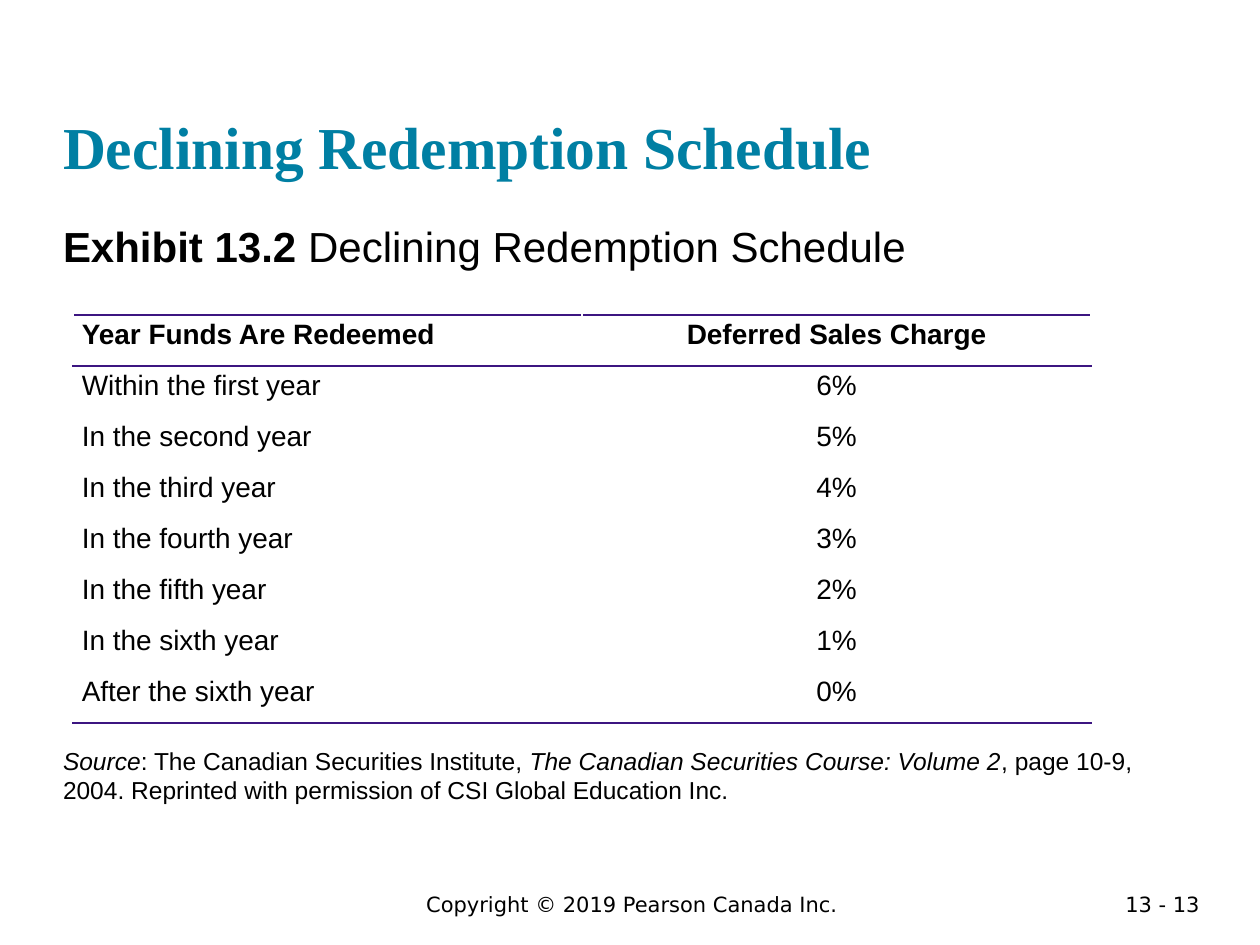
from pptx import Presentation
from pptx.dml.color import RGBColor
from pptx.enum.text import MSO_ANCHOR, MSO_AUTO_SIZE, PP_ALIGN
from pptx.oxml import parse_xml
from pptx.oxml.ns import nsdecls
from pptx.util import Inches, Pt

TEAL = RGBColor(0x00, 0x7F, 0xA3)
BLACK = RGBColor(0x00, 0x00, 0x00)
PURPLE = RGBColor(0x3C, 0x15, 0x81)

TITLE = "Declining Redemption Schedule"
EXHIBIT = [("Exhibit 13.2 ", "bold"), ("Declining Redemption Schedule", "")]
SOURCE = [
    ("Source", "italic"),
    (": The Canadian Securities Institute, ", ""),
    ("The Canadian Securities Course: Volume 2", "italic"),
    (", page 10-9, 2004. Reprinted with permission of CSI Global Education Inc.", ""),
]
SCHEDULE = [
    ("Year Funds Are Redeemed", "Deferred Sales Charge"),
    ("Within the first year", "6%"),
    ("In the second year", "5%"),
    ("In the third year", "4%"),
    ("In the fourth year", "3%"),
    ("In the fifth year", "2%"),
    ("In the sixth year", "1%"),
    ("After the sixth year", "0%"),
]
FOOTERS = [
    ("Copyright © 2019 Pearson Canada Inc.", (1.64, 7.03, 6.75, 0.3), PP_ALIGN.CENTER),
    ("13 - 13", (8.62, 7.03, 1, 0.22), PP_ALIGN.RIGHT),
]


def style(font, name, size, color=BLACK, bold=False, italic=False):
    font.name = name
    font.size = Pt(size)
    font.color.rgb = color
    font.bold = bold
    font.italic = italic


def place(shape, left, top, width, height):
    shape.left, shape.top = Inches(left), Inches(top)
    shape.width, shape.height = Inches(width), Inches(height)
    frame = shape.text_frame
    frame.margin_left = frame.margin_right = frame.margin_top = frame.margin_bottom = 0
    frame.word_wrap = True
    frame.auto_size = MSO_AUTO_SIZE.NONE
    return frame


def fill_body(shape, top, size, parts):
    para = place(shape, 0.5, top, 9, 0.58).paragraphs[0]
    properties = para._p.get_or_add_pPr()
    properties.set("marL", "0")
    properties.set("indent", "0")
    properties.append(parse_xml(f"<a:buNone {nsdecls('a')}/>"))
    para.space_before = Pt(0)
    for text, emphasis in parts:
        span = para.add_run()
        span.text = text
        style(span.font, "Arial", size, bold=emphasis == "bold", italic=emphasis == "italic")


def add_rules(cell, sides):
    properties = cell._tc.get_or_add_tcPr()
    for index, side in enumerate(sides):
        properties.insert(index, parse_xml(
            f'<a:{side} {nsdecls("a")} w="{Pt(1)}"><a:solidFill>'
            f'<a:srgbClr val="{PURPLE}"/></a:solidFill></a:{side}>'))


def add_schedule(page):
    last = len(SCHEDULE) - 1
    table = page.shapes.add_table(
        len(SCHEDULE), 2, Inches(0.58), Inches(2.5), Inches(8.08), Inches(3.24)).table
    table.first_row = table.horz_banding = False
    rules = {0: ("lnT", "lnB"), 1: ("lnT",), last: ("lnB",)}
    for row, values in enumerate(SCHEDULE):
        for column, value in enumerate(values):
            cell = table.cell(row, column)
            cell.margin_left = cell.margin_right = Inches(0.07)
            cell.margin_top = cell.margin_bottom = 0
            cell.fill.background()
            add_rules(cell, rules.get(row, ()))
            para = cell.text_frame.paragraphs[0]
            para.text = value
            para.alignment = (PP_ALIGN.LEFT, PP_ALIGN.CENTER)[column]
            para.line_spacing = 1.15
            style(para.runs[0].font, "Arial", 16, bold=row == 0)


def add_footer(page, text, position, alignment):
    box = page.shapes.add_textbox(*map(Inches, position))
    box.text_frame.word_wrap = True
    para = box.text_frame.paragraphs[0]
    para.text = text
    para.alignment = alignment
    style(para.runs[0].font, "DejaVu Sans", 12)


def main():
    deck = Presentation()
    deck.slide_width, deck.slide_height = Inches(10), Inches(7.5)
    page = deck.slides.add_slide(deck.slide_layouts.get_by_name("Two Content"))
    title, exhibit, source = page.placeholders

    frame = place(title, 0.5, 0.24, 9, 1.2)
    frame.vertical_anchor = MSO_ANCHOR.BOTTOM
    frame.text = TITLE
    frame.paragraphs[0].alignment = PP_ALIGN.LEFT
    style(frame.paragraphs[0].runs[0].font, "Times New Roman", 34, TEAL, bold=True)

    fill_body(exhibit, 1.75, 24, EXHIBIT)
    add_schedule(page)
    fill_body(source, 5.92, 14, SOURCE)
    for text, position, alignment in FOOTERS:
        add_footer(page, text, position, alignment)
    deck.save("out.pptx")


if __name__ == "__main__":
    main()
